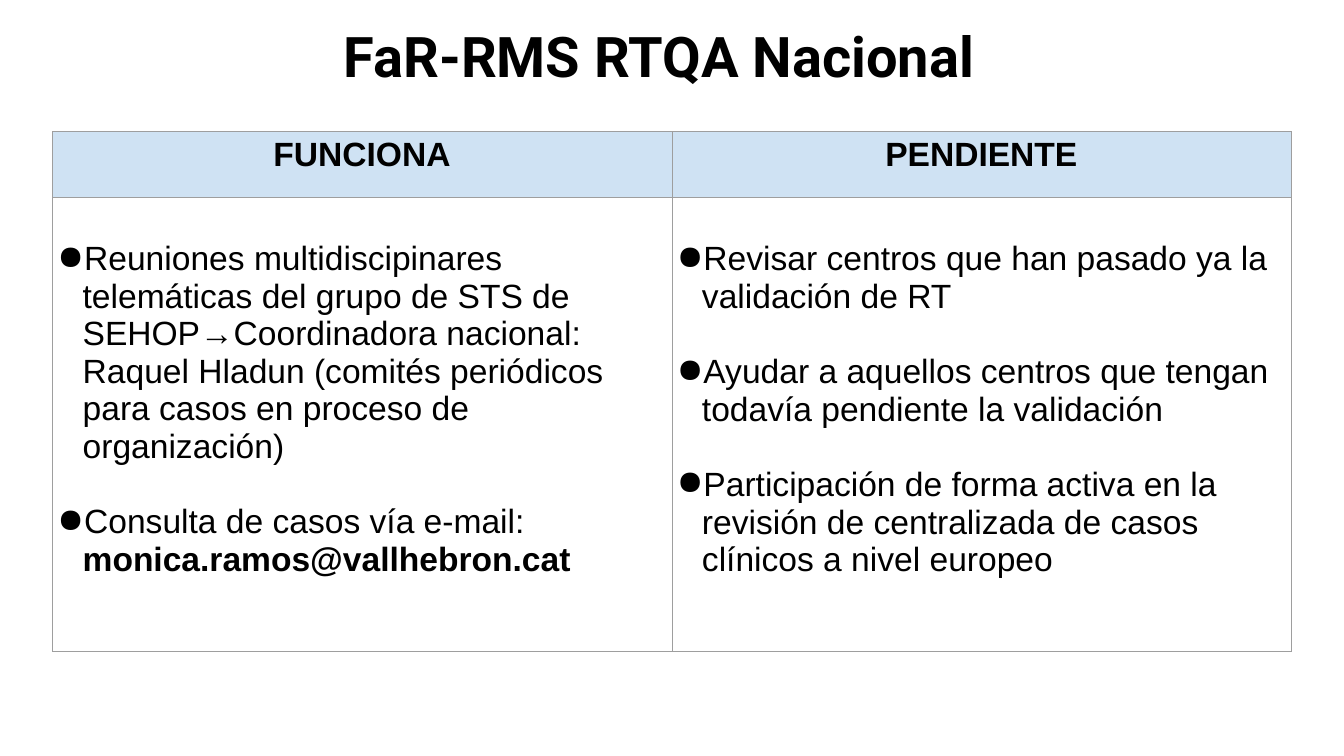
from dataclasses import dataclass

from lxml.etree import SubElement
from pptx import Presentation
from pptx.dml.color import RGBColor
from pptx.enum.text import MSO_ANCHOR, PP_ALIGN
from pptx.oxml.ns import qn
from pptx.util import Inches, Pt


@dataclass(frozen=True)
class Theme:
    text: str = "000000"
    header_fill: str = "CFE2F3"
    border: str = "9E9E9E"
    title_font: str = "Roboto"
    body_font: str = "Arial"
    title_size: int = 80
    body_size: int = 48
    paragraph_gap: int = 54


theme = Theme()


def style_font(paragraph, name, size, bold):
    paragraph.font.name = name
    paragraph.font.size = Pt(size)
    paragraph.font.bold = bold
    paragraph.font.color.rgb = RGBColor.from_string(theme.text)


def add_borders(cell):
    properties = cell._tc.get_or_add_tcPr()
    for side in ("lnL", "lnR", "lnT", "lnB"):
        line = SubElement(properties, qn(f"a:{side}"), w=str(Pt(0.75)))
        fill = SubElement(line, qn("a:solidFill"))
        SubElement(fill, qn("a:srgbClr"), val=theme.border)


# Each column: heading, then bullets made of (text, bold) runs
columns = [
    ("FUNCIONA", [
        [("Reuniones multidiscipinares telemáticas del grupo de STS de "
          "SEHOP→Coordinadora nacional: Raquel Hladun (comités periódicos "
          "para casos en proceso de organización)", False)],
        [("Consulta de casos vía e-mail: ", False),
         ("monica.ramos@vallhebron.cat", True)],
    ]),
    ("PENDIENTE", [
        [("Revisar centros que han pasado ya la validación de RT", False)],
        [("Ayudar a aquellos centros que tengan todavía pendiente la "
          "validación", False)],
        [("Participación de forma activa en la revisión de centralizada de "
          "casos clínicos a nivel europeo", False)],
    ]),
]

presentation = Presentation()
presentation.slide_width = Inches(26.67)
presentation.slide_height = Inches(15)
slide = presentation.slides.add_slide(presentation.slide_layouts[6])

# Title
title = slide.shapes.add_textbox(
    Inches(1.37), Inches(0.62), Inches(23.43), Inches(1.19))
frame = title.text_frame
frame.word_wrap = True
frame.vertical_anchor = MSO_ANCHOR.BOTTOM
frame.margin_left = frame.margin_right = Inches(0.06)
frame.margin_top = frame.margin_bottom = Inches(0.06)
paragraph = frame.paragraphs[0]
paragraph.text = "FaR-RMS RTQA Nacional"
paragraph.alignment = PP_ALIGN.CENTER
paragraph.line_spacing = 0.8
style_font(paragraph, theme.title_font, theme.title_size, True)

# Table
table = slide.shapes.add_table(
    2, len(columns), Inches(1.04), Inches(2.61),
    Inches(24.58), Inches(10.32)).table
table.first_row = table.horz_banding = False
table.rows[0].height = Inches(1.31)
table.rows[1].height = Inches(9.01)

for index, (heading, bullets) in enumerate(columns):
    table.columns[index].width = Inches(12.29)
    header, body = table.cell(0, index), table.cell(1, index)
    for cell in (header, body):
        cell.margin_left = cell.margin_right = Inches(0.1)
        cell.margin_top = cell.margin_bottom = Inches(0.1)
        add_borders(cell)

    # Heading
    header.fill.solid()
    header.fill.fore_color.rgb = RGBColor.from_string(theme.header_fill)
    paragraph = header.text_frame.paragraphs[0]
    paragraph.text = heading
    paragraph.alignment = PP_ALIGN.CENTER
    style_font(paragraph, theme.body_font, theme.body_size, True)

    # Bullets
    body.fill.background()
    body.margin_top = Inches(0.85)
    frame = body.text_frame
    for number, runs in enumerate(bullets):
        paragraph = frame.add_paragraph() if number else frame.paragraphs[0]
        properties = paragraph._p.get_or_add_pPr()
        properties.set("marL", str(Inches(0.5)))
        properties.set("indent", str(Inches(-0.58)))
        color = SubElement(properties, qn("a:buClr"))
        SubElement(color, qn("a:srgbClr"), val=theme.text)
        SubElement(properties, qn("a:buChar"), char="●")
        if number:
            paragraph.space_before = Pt(theme.paragraph_gap)
        style_font(paragraph, theme.body_font, theme.body_size, False)
        for text, bold in runs:
            run = paragraph.add_run()
            run.text = text
            if bold:
                run.font.bold = True

presentation.save("out.pptx")
